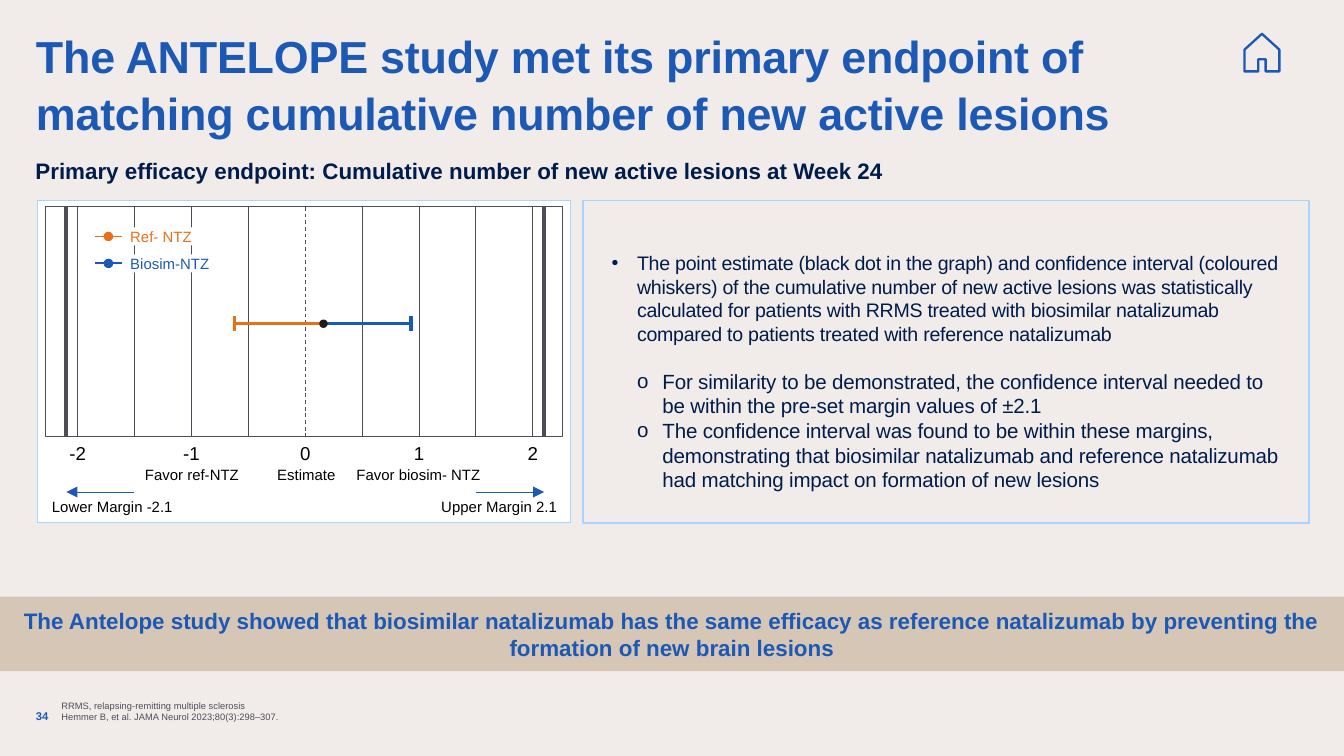
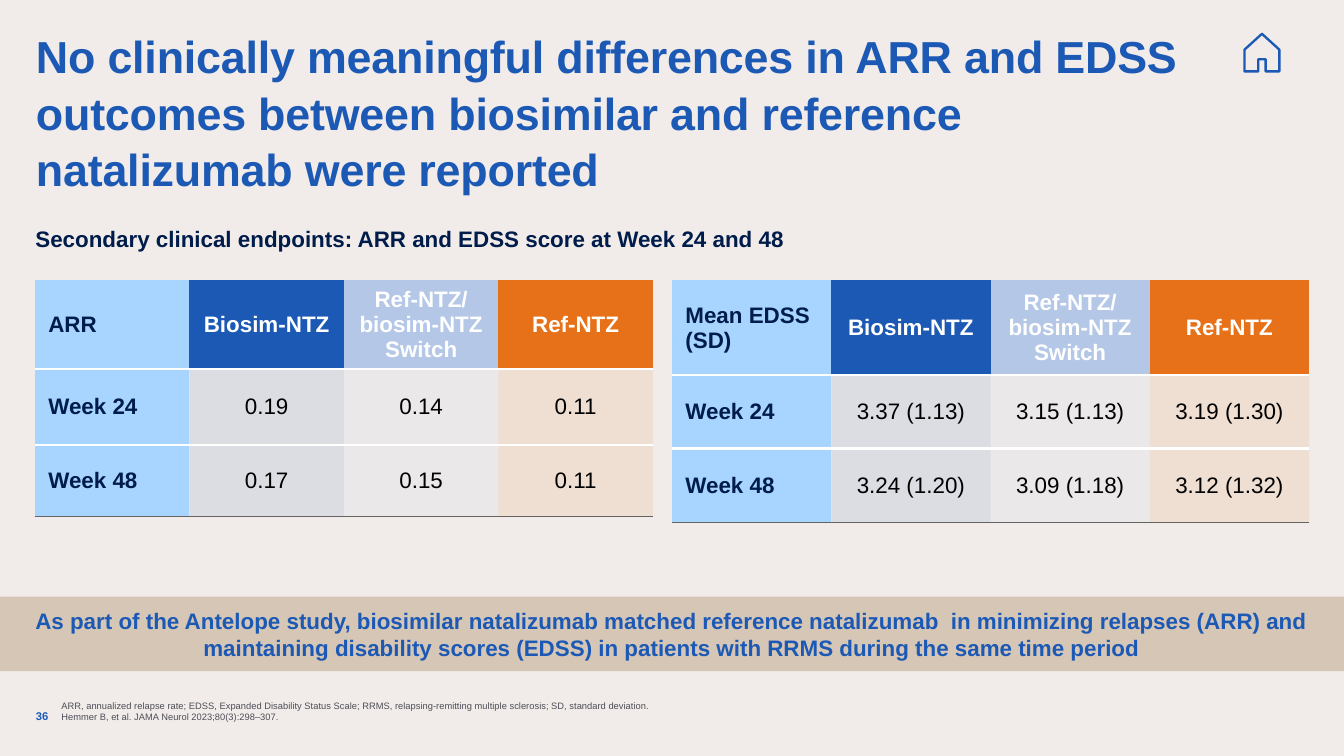
from lxml.etree import SubElement
from pptx import Presentation
from pptx.dml.color import RGBColor
from pptx.enum.dml import MSO_LINE
from pptx.enum.shapes import MSO_CONNECTOR, MSO_SHAPE
from pptx.enum.text import MSO_ANCHOR, MSO_AUTO_SIZE, PP_ALIGN
from pptx.oxml.ns import qn
from pptx.util import Cm, Pt

BLUE, NAVY, ORANGE, SKY, PALE = "1C59B5", "001C4A", "E77119", "A8D5FF", "B4C7E7"
WHITE, BLACK, GREY, RULE = "FFFFFF", "000000", "4D4D57", "646464"
PAPER, SAND = "F1ECE9", "D6C6B6"
CITATION = "Hemmer B, et al. JAMA Neurol 2023;80(3):298–307."

LESIONS = dict(
    title="The ANTELOPE study met its primary endpoint of matching cumulative "
          "number of new active lesions",
    title_width=21.26, number="34", subtitle_top=3.0,
    subtitle="Primary efficacy endpoint: Cumulative number of new active lesions at Week 24",
    message="The Antelope study showed that biosimilar natalizumab has the same efficacy as "
            "reference natalizumab by preventing the formation of new brain lesions",
    notes=["RRMS, relapsing-remitting multiple sclerosis", CITATION])
OUTCOMES = dict(
    title="No clinically meaningful differences in ARR and EDSS outcomes between "
          "biosimilar and reference natalizumab were reported",
    title_width=22.17, number="36", subtitle_top=4.3,
    subtitle="Secondary clinical endpoints: ARR and EDSS score at Week 24 and 48",
    message="As part of the Antelope study, biosimilar natalizumab matched reference natalizumab  "
            "in minimizing relapses (ARR) and maintaining disability scores (EDSS) in patients "
            "with RRMS during the same time period",
    notes=["ARR, annualized relapse rate; EDSS, Expanded Disability Status Scale; RRMS, "
           "relapsing-remitting multiple sclerosis; SD, standard deviation.", CITATION])

# level, size, space before, text
BULLETS = [
    (0, 10.5, 0, "The point estimate (black dot in the graph) and confidence interval (coloured "
     "whiskers) of the cumulative number of new active lesions was statistically calculated for "
     "patients with RRMS treated with biosimilar natalizumab compared to patients treated with "
     "reference natalizumab"),
    (1, 11, 12.6, "For similarity to be demonstrated, the confidence interval needed to be within "
     "the pre-set margin values of ±2.1"),
    (1, 11, 0, "The confidence interval was found to be within these margins, demonstrating that "
     "biosimilar natalizumab and reference natalizumab had matching impact on formation of new "
     "lesions"),
]

LOW, ESTIMATE, HIGH, MARGIN = -0.62, 0.16, 0.93, 2.1
PLOT_TOP, PLOT_BOTTOM, PLOT_LEFT, PLOT_RIGHT = 3.91, 8.26, 0.86, 10.64
CAPTIONS = [("Favor ref-NTZ", 2.74, 8.81, 1.78), ("Estimate", 5.23, 8.81, 1.12),
            ("Favor biosim- NTZ", 6.73, 8.81, 2.36),
            ("Lower Margin -2.1", 0.97, 9.4, 2.31), ("Upper Margin 2.1", 8.33, 9.4, 2.21)]
LEGEND = [("Ref- NTZ", ORANGE, 1.17), ("Biosim-NTZ", BLUE, 1.5)]

ARMS = ["Biosim-NTZ", "Ref-NTZ/ biosim-NTZ Switch", "Ref-NTZ"]
ARM_COLORS = [BLUE, PALE, ORANGE]
TABLES = [
    dict(left=0.66, col=2.92, heights=[1.68, 1.43, 1.35], rows=[
        ["ARR", *ARMS],
        ["Week 24", "0.19", "0.14", "0.11"],
        ["Week 48", "0.17", "0.15", "0.11"]]),
    dict(left=12.7, col=3.01, heights=[1.79, 1.39, 1.39], rows=[
        ["Mean EDSS (SD)", *ARMS],
        ["Week 24", "3.37 (1.13)", "3.15 (1.13)", "3.19 (1.30)"],
        ["Week 48", "3.24 (1.20)", "3.09 (1.18)", "3.12 (1.32)"]]),
]


def rgb(color):
    """Turn a hex string into a colour."""
    return RGBColor.from_string(color)


def write(tf, text, first=True, size=12, color=NAVY, bold=False, align=PP_ALIGN.LEFT,
          before=0, line=None, spc=None, level=0, bullet=None):
    """Write one formatted paragraph into a text frame."""
    p = tf.paragraphs[0] if first else tf.add_paragraph()
    p.level, p.alignment = level, align
    if bullet:
        pPr = p._p.get_or_add_pPr()
        pPr.set("marL", str(Cm(0.48 * (level + 1))))
        pPr.set("indent", str(-Cm(0.48)))
        SubElement(pPr, qn("a:buFont")).set("typeface", "Arial")
        SubElement(pPr, qn("a:buChar")).set("char", bullet)
    p.space_before = Pt(before)
    if line:
        p.line_spacing = line
    r = p.add_run()
    r.text = text
    r.font.name, r.font.size, r.font.bold = "Arial", Pt(size), bold
    r.font.color.rgb = rgb(color)
    if spc:
        r._r.get_or_add_rPr().set("spc", str(spc))
    return p


def frame(sp, anchor=MSO_ANCHOR.TOP, inset=(0, 0, 0, 0), wrap=True):
    """Set the margins, anchor and wrapping of a shape's text frame."""
    tf = sp.text_frame
    tf.auto_size, tf.word_wrap, tf.vertical_anchor = MSO_AUTO_SIZE.NONE, wrap, anchor
    tf.margin_left, tf.margin_top, tf.margin_right, tf.margin_bottom = map(Cm, inset)
    return tf


def place(sp, *box):
    """Move and size a placeholder."""
    sp.left, sp.top, sp.width, sp.height = map(Cm, box)
    return sp


def label(s, text, box, anchor=MSO_ANCHOR.TOP, wrap=True, **fmt):
    """Add a text box with one paragraph."""
    tf = frame(s.shapes.add_textbox(*map(Cm, box)), anchor, wrap=wrap)
    write(tf, text, **fmt)
    return tf


def paint(sp, fill=None, line=None, width=0.5):
    """Give a shape its fill and outline, without shadow."""
    sp.shadow.inherit = False
    if fill:
        sp.fill.solid()
        sp.fill.fore_color.rgb = rgb(fill)
    else:
        sp.fill.background()
    if line:
        sp.line.color.rgb, sp.line.width = rgb(line), Pt(width)
    else:
        sp.line.fill.background()
    return sp


def block(s, box, kind=MSO_SHAPE.RECTANGLE, **look):
    """Add a painted preset shape."""
    return paint(s.shapes.add_shape(kind, *map(Cm, box)), **look)


def dot(s, x, y, size, color):
    """Add a filled circle centred on a point."""
    block(s, (x - size / 2, y - size / 2, size, size), MSO_SHAPE.OVAL, fill=color)


def rule(s, x1, y1, x2, y2, color=GREY, width=0.5, dash=False, arrow=False):
    """Add a straight line, dashed or with an arrowhead on request."""
    c = s.shapes.add_connector(MSO_CONNECTOR.STRAIGHT, *map(Cm, (x1, y1, x2, y2)))
    c.line.color.rgb, c.line.width = rgb(color), Pt(width)
    if dash:
        c.line.dash_style = MSO_LINE.DASH
    if arrow:
        SubElement(c.line._get_or_add_ln(), qn("a:tailEnd")).set("type", "triangle")
    SubElement(c._element.spPr, qn("a:effectLst"))


def house(s):
    """Draw the home icon in the top right corner."""
    half = [(0.33, 0.94), (0.33, 1.35), (0.07, 1.35), (0.07, 1.12)]
    points = [(0, 0.64), *half, *[(-x, y) for x, y in reversed(half)]]
    points = [(Cm(23.85 + x), Cm(y)) for x, y in points]
    fb = s.shapes.build_freeform(*points[0])
    fb.add_line_segments(points[1:])
    paint(fb.convert_to_shape(), line=BLUE, width=1.25)


def start_slide(prs, layout, content):
    """Add a slide with the title, icon, subtitle, message band and footer."""
    s = prs.slides.add_slide(prs.slide_layouts[layout])
    tf = frame(place(s.shapes.title, 0.68, 0.5, content["title_width"], 3.15))
    write(tf, content["title"], size=24, color=BLUE, bold=True, line=1.05, spc=-10)
    house(s)
    label(s, content["subtitle"], (0.67, content["subtitle_top"], 22.86, 0.86),
          bold=True, line=0.95)
    band = block(s, (0, 11.28, 25.4, 1.41), fill=SAND)
    tf = frame(band, MSO_ANCHOR.MIDDLE, (0.38, 0.18, 0.38, 0.18))
    write(tf, content["message"], color=BLUE, bold=True, align=PP_ALIGN.CENTER)
    label(s, content["number"], (0.68, 13.41, 0.41, 0.38), size=6, color=BLUE, bold=True)
    sp = s.shapes.add_textbox(*map(Cm, (1.16, 13.41, 20.57, 0.38)))
    tf = frame(sp, MSO_ANCHOR.BOTTOM, (0, 0, 0, 0.13))
    for i, note in enumerate(content["notes"]):
        write(tf, note, first=i == 0, size=5, color=GREY)
    return s


def plot_x(value):
    """Give the horizontal place of a value on the plot."""
    return 5.77 + 2.15 * value


def forest_plot(s):
    """Draw the confidence interval plot with its axis and legend."""
    block(s, (0.71, 3.79, 10.07, 6.09), fill=WHITE, line=SKY, width=0.75)
    block(s, (PLOT_LEFT, PLOT_TOP, PLOT_RIGHT - PLOT_LEFT, PLOT_BOTTOM - PLOT_TOP), line=GREY)
    for step in range(-4, 5):
        x = plot_x(step / 2)
        rule(s, x, PLOT_TOP, x, PLOT_BOTTOM, dash=step == 0)
        if step % 2 == 0:
            label(s, str(step // 2), (x - 0.2, 8.36, 0.4, 0.43), wrap=False,
                  size=10, color=BLACK, align=PP_ALIGN.CENTER)
    for side in (-1, 1):
        x = plot_x(side * MARGIN)
        rule(s, x, PLOT_TOP, x, PLOT_BOTTOM, width=2.25)
        rule(s, x - side * 1.28, 9.3, x, 9.3, color=BLUE, arrow=True)
    y, middle = 6.12, plot_x(ESTIMATE)
    for end, color in ((LOW, ORANGE), (HIGH, BLUE)):
        x = plot_x(end)
        rule(s, x, y - 0.14, x, y + 0.14, color=color, width=1.75)
        rule(s, x, y, middle, y, color=color, width=1.75)
    dot(s, middle, y, 0.16, "1D1D1B")
    for text, left, top, width in CAPTIONS:
        label(s, text, (left, top, width, 0.33), wrap=False,
              size=8, color=BLACK, align=PP_ALIGN.CENTER)
    for i, (text, color, width) in enumerate(LEGEND):
        y = 4.47 + 0.51 * i
        sp = block(s, (2.46, y - 0.17, width, 0.34), fill=WHITE)
        write(frame(sp, MSO_ANCHOR.MIDDLE, wrap=False), text, size=8, color=color,
              align=PP_ALIGN.CENTER)
        rule(s, 1.8, y, 2.31, y, color=color, width=1)
        dot(s, 2.05, y, 0.18, color)


def border(cell, side, color, width):
    """Draw one border of a table cell."""
    ln = SubElement(cell._tc.get_or_add_tcPr(), qn("a:" + side), w=str(Pt(width)))
    SubElement(SubElement(ln, qn("a:solidFill")), qn("a:srgbClr")).set("val", color)


def results_table(s, left, col, heights, rows):
    """Add a table of results by treatment arm."""
    box = map(Cm, (left, 5.3, col * len(rows[0]), sum(heights)))
    table = s.shapes.add_table(len(rows), len(rows[0]), *box).table
    table.first_row = table.horz_banding = False
    table._tbl.tblPr.find(qn("a:tableStyleId")).text = "{2D5ABB26-0587-4C30-8999-92F81FD0307C}"
    for column in table.columns:
        column.width = Cm(col)
    for i, row in enumerate(rows):
        table.rows[i].height = Cm(heights[i])
        for j, text in enumerate(row):
            cell = table.cell(i, j)
            cell.vertical_anchor = MSO_ANCHOR.MIDDLE
            cell.margin_top = cell.margin_bottom = Cm(0.1)
            if i:
                border(cell, "lnT", WHITE, 1.5)
            last = i == len(rows) - 1
            border(cell, "lnB", RULE if last else WHITE, 0.5 if last else 1.5)
            cell.fill.solid()
            cell.fill.fore_color.rgb = rgb(ARM_COLORS[j - 1] if j else SKY)
            if i and j:
                clr = cell._tc.tcPr.find(qn("a:solidFill")).find(qn("a:srgbClr"))
                SubElement(clr, qn("a:alpha")).set("val", "10000")
            color = NAVY if j == 0 else BLACK if i else WHITE
            write(cell.text_frame, text, color=color, bold=i == 0 or j == 0,
                  align=PP_ALIGN.CENTER if j else PP_ALIGN.LEFT)


def main():
    """Build the presentation."""
    prs = Presentation()
    prs.slide_width, prs.slide_height = Cm(25.4), Cm(14.29)
    fill = prs.slide_master.background.fill
    fill.solid()
    fill.fore_color.rgb = rgb(PAPER)

    s = start_slide(prs, 1, LESIONS)
    forest_plot(s)
    block(s, (11.02, 3.79, 13.72, 6.09), line=SKY, width=1)
    tf = frame(place(s.placeholders[1], 11.56, 4.75, 12.6, 4.62))
    for i, (level, size, before, text) in enumerate(BULLETS):
        write(tf, text, first=i == 0, size=size, before=before, spc=-10,
              level=level, bullet="•o"[level])

    s = start_slide(prs, 5, OUTCOMES)
    for table in TABLES:
        results_table(s, **table)
    prs.save("out.pptx")


if __name__ == "__main__":
    main()
